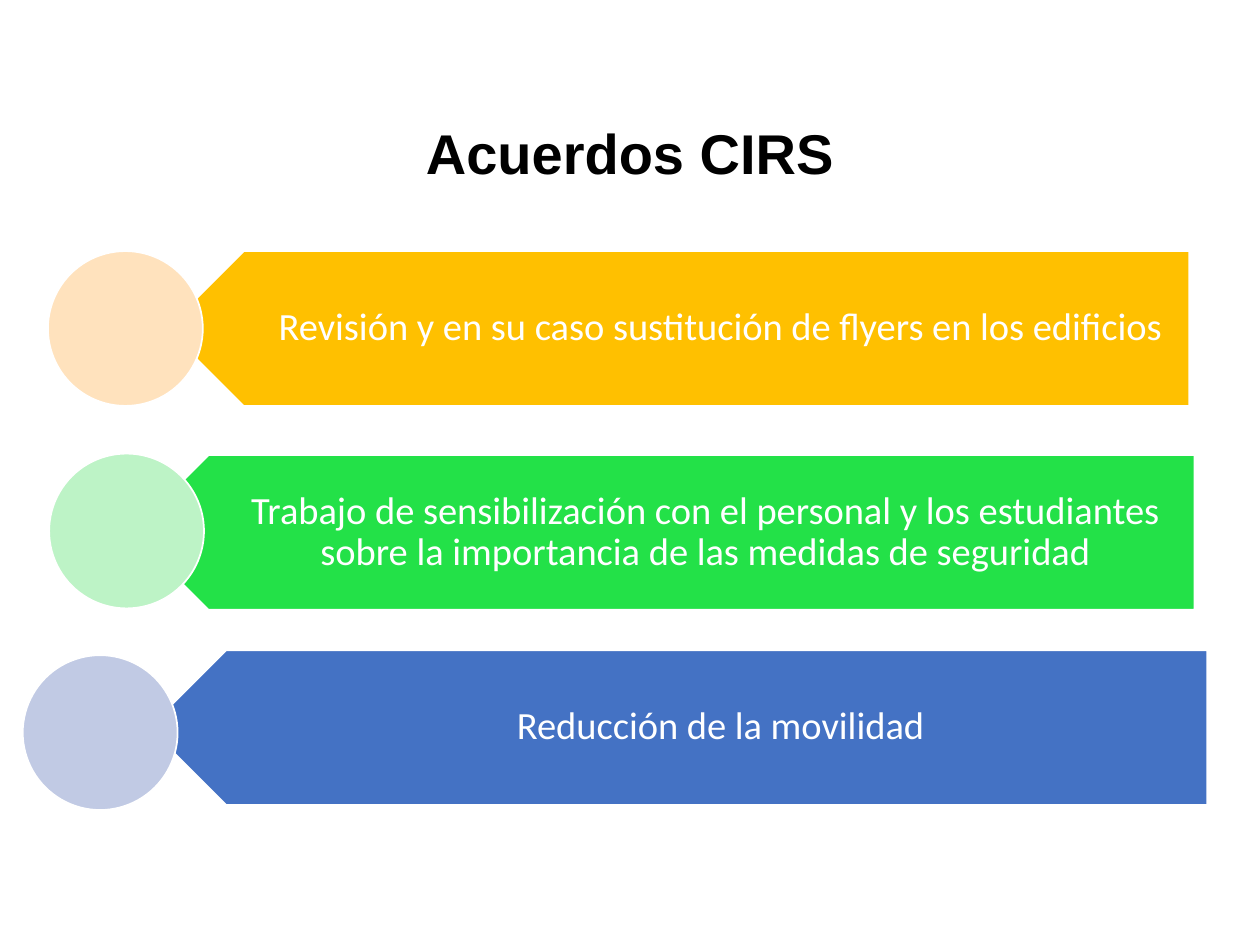
from pptx import Presentation
from pptx.dml.color import RGBColor
from pptx.enum import shapes, text
from pptx.util import Pt

TITLE = "Acuerdos CIRS"
SIZE = 88.5  # height of each arrow and diameter of each circle
# wording, arrow (left, top, width, fill), circle (left, top, fill)
ROWS = [
    ("Revisión y en su caso sustitución de flyers en los edificios",
     (95, 143.5, 584.6, "FFC000"), (27.4, 143.5, "FFE2BD")),
    ("Trabajo de sensibilización con el personal y los estudiantes "
     "sobre la importancia de las medidas de seguridad",
     (74.9, 260, 607.7, "23E148"), (28.1, 259.2, "BDF3C6")),
    ("Reducción de la movilidad",
     (85, 371.5, 604.8, "4472C4"), (13, 374.4, "C1CAE4")),
]


def color(code):
    return RGBColor.from_string(code)


def write(para, words, font, size, code, bold=False):
    para.alignment = text.PP_ALIGN.CENTER
    run = para.add_run()
    run.text = words
    run.font.name, run.font.size, run.font.bold = font, Pt(size), bold
    run.font.color.rgb = color(code)


def inset(frame, left, top, right, bottom):
    frame.margin_left, frame.margin_top = Pt(left), Pt(top)
    frame.margin_right, frame.margin_bottom = Pt(right), Pt(bottom)
    frame.vertical_anchor = text.MSO_ANCHOR.MIDDLE


def draw(slide, kind, left, top, width, fill):
    shape = slide.shapes.add_shape(kind, Pt(left), Pt(top), Pt(width), Pt(SIZE))
    shape.shadow.inherit = False
    shape.fill.solid()
    shape.fill.fore_color.rgb = color(fill)
    shape.line.color.rgb = color("FFFFFF")
    shape.line.width = Pt(1)
    return shape


def label(slide, words, left, top, width):
    """Upright text over the arrow body, clear of half its point."""
    tip = SIZE / 4
    box = slide.shapes.add_textbox(Pt(left + tip), Pt(top), Pt(width - tip), Pt(SIZE))
    frame = box.text_frame
    frame.word_wrap = True
    inset(frame, 39, 6.6, 12.3, 6.6)
    para = frame.paragraphs[0]
    para.line_spacing = 0.9
    write(para, words, "Calibri", 22, "FFFFFF")


def main():
    deck = Presentation()
    deck.slide_width, deck.slide_height = Pt(720), Pt(540)
    slide = deck.slides.add_slide(deck.slide_layouts[5])

    title = slide.shapes.title
    title.left, title.top = Pt(235), Pt(64)
    title.width, title.height = Pt(250), Pt(46)
    frame = title.text_frame
    frame.word_wrap = False
    frame.auto_size = text.MSO_AUTO_SIZE.NONE
    inset(frame, 7.2, 3.6, 7.2, 3.6)
    write(frame.paragraphs[0], TITLE, "Arial", 32, "000000", True)

    kinds = shapes.MSO_SHAPE
    for words, (left, top, width, fill), (x, y, tint) in ROWS:
        arrow = draw(slide, kinds.PENTAGON, left, top, width, fill)
        arrow.rotation = 180
        label(slide, words, left, top, width)
        draw(slide, kinds.OVAL, x, y, SIZE, tint)

    deck.save("out.pptx")


if __name__ == "__main__":
    main()
